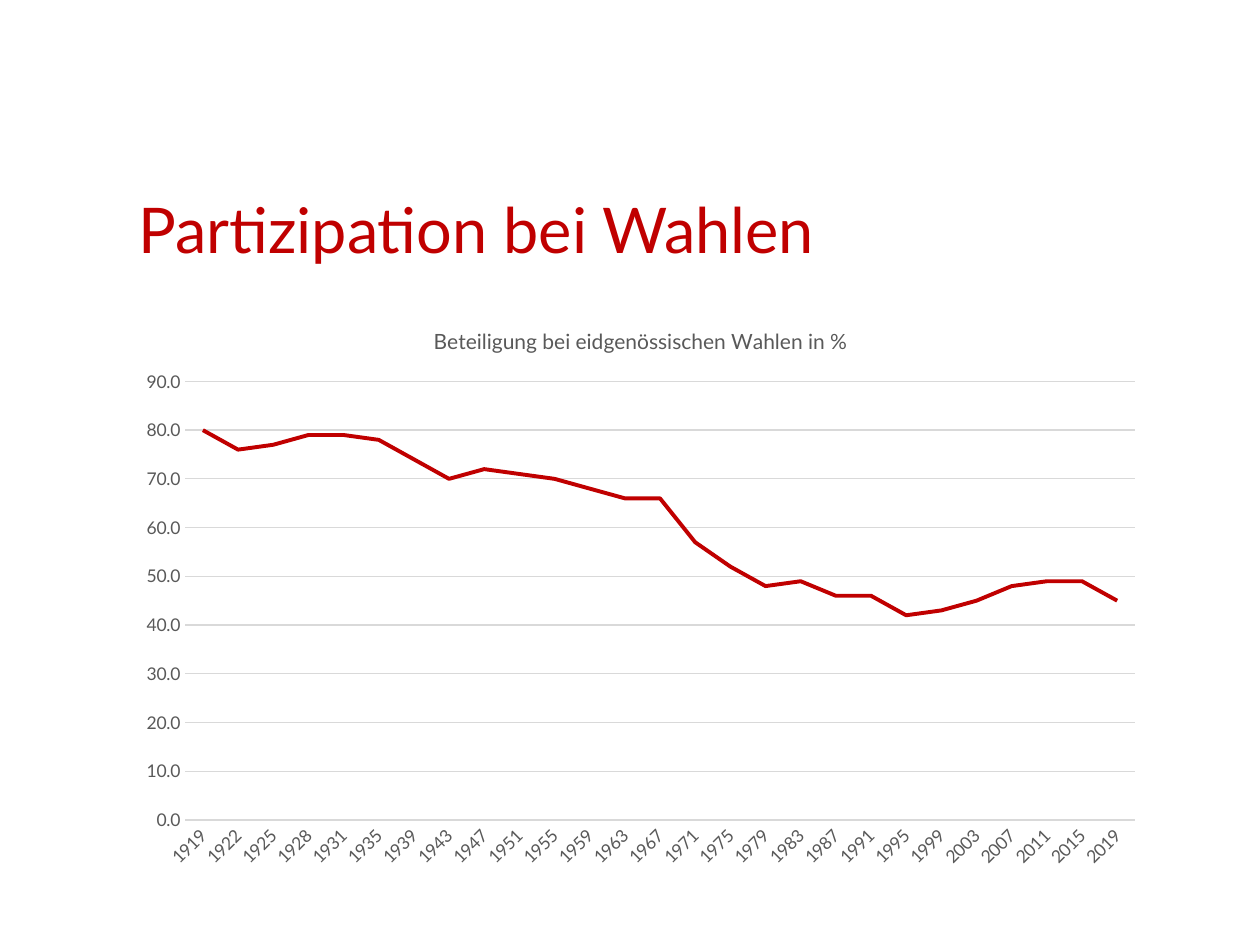
from pptx import Presentation
from pptx.chart.data import CategoryChartData
from pptx.dml.color import RGBColor
from pptx.enum.chart import XL_CHART_TYPE, XL_TICK_MARK
from pptx.enum.text import MSO_ANCHOR
from pptx.oxml.ns import qn
from pptx.util import Pt

FONT = "Lato"
COLORS = {"accent": "C00000", "label": "595959", "grid": "D9D9D9", "paper": "FFFFFF"}
TURNOUT = {
    "1919": 80, "1922": 76, "1925": 77, "1928": 79, "1931": 79, "1935": 78,
    "1939": 74, "1943": 70, "1947": 72, "1951": 71, "1955": 70, "1959": 68,
    "1963": 66, "1967": 66, "1971": 57, "1975": 52, "1979": 48, "1983": 49,
    "1987": 46, "1991": 46, "1995": 42, "1999": 43, "2003": 45, "2007": 48,
    "2011": 49, "2015": 49, "2019": 45,
}


def color(name):
    return RGBColor.from_string(COLORS[name])


def set_font(font, size, name):
    font.name = FONT
    font.size = Pt(size)
    font.bold = False
    font.color.rgb = color(name)


def set_line(line, width, name):
    line.width = Pt(width)
    line.color.rgb = color(name)


def add_text(page, text, *, left, top, width, height, size, fill, anchor):
    box = page.shapes.add_textbox(Pt(left), Pt(top), Pt(width), Pt(height))
    frame = box.text_frame
    frame.word_wrap = True
    frame.vertical_anchor = anchor
    span = frame.paragraphs[0].add_run()
    span.text = text
    set_font(span.font, size, fill)


def style_axes(chart):
    years, percent = chart.category_axis, chart.value_axis
    for axis in (years, percent):
        axis.major_tick_mark = XL_TICK_MARK.NONE
        axis.minor_tick_mark = XL_TICK_MARK.NONE
        set_font(axis.tick_labels.font, 10, "label")
    set_line(years.format.line, 0.75, "grid")
    years.tick_labels.font._element.getparent().getparent().getparent().find(
        qn("a:bodyPr")).set("rot", "-2700000")

    percent.minimum_scale, percent.maximum_scale = 0, 90
    percent.major_unit = 10
    percent.format.line.fill.background()
    percent.has_major_gridlines = True
    set_line(percent.major_gridlines.format.line, 0.75, "grid")
    percent.tick_labels.number_format = "0.0"
    percent.tick_labels.number_format_is_linked = False


def add_line_chart(page, title, values, *, left, top, width, height):
    data = CategoryChartData(number_format="0.0")
    data.categories = list(values)
    data.add_series("Series 1", list(values.values()))
    chart = page.shapes.add_chart(
        XL_CHART_TYPE.LINE, Pt(left), Pt(top), Pt(width), Pt(height), data).chart
    set_font(chart.font, 10, "label")
    chart.has_legend = False
    chart.has_title = True
    chart.chart_title.include_in_layout = False
    span = chart.chart_title.text_frame.paragraphs[0].add_run()
    span.text = title
    set_font(span.font, 12, "label")

    chart.plots[0].vary_by_categories = False
    series = chart.plots[0].series[0]
    series.smooth = False
    set_line(series.format.line, 2.25, "accent")
    style_axes(chart)


def main():
    deck = Presentation()
    deck.slide_width, deck.slide_height = Pt(720), Pt(540)
    page = deck.slides.add_slide(deck.slide_layouts[6])
    page.background.fill.solid()
    page.background.fill.fore_color.rgb = color("paper")
    add_text(page, "Partizipation bei Wahlen", left=72, top=65.5, width=576,
             height=90, size=36, fill="accent", anchor=MSO_ANCHOR.BOTTOM)
    add_line_chart(page, "Beteiligung bei eidgenössischen Wahlen in %", TURNOUT,
                   left=72, top=173.5, width=588.25, height=329)
    deck.save("out.pptx")


if __name__ == "__main__":
    main()
